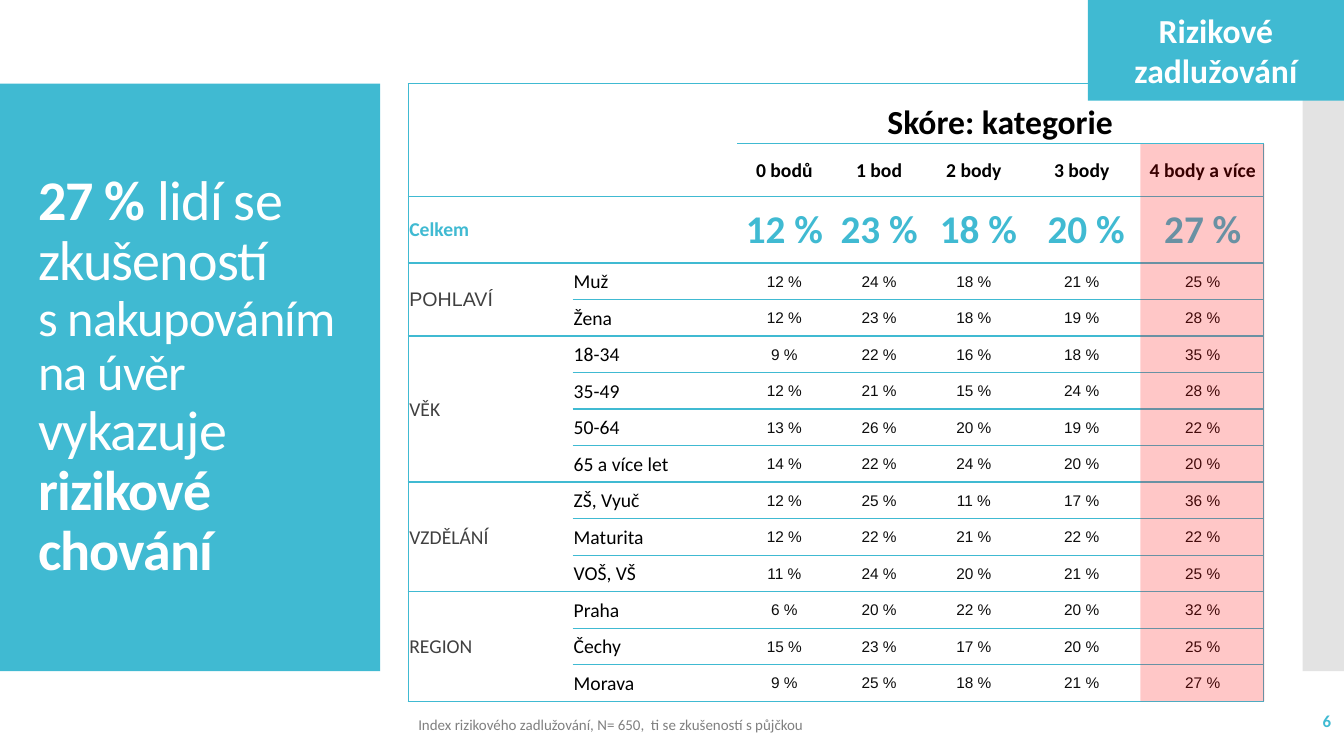
from lxml.etree import SubElement
from pptx import Presentation
from pptx.dml.color import RGBColor
from pptx.enum.shapes import MSO_SHAPE
from pptx.enum.text import MSO_ANCHOR, PP_ALIGN
from pptx.oxml.ns import qn
from pptx.util import Inches, Pt

TEAL, WHITE, BLACK = "40BAD2", "FFFFFF", "000000"
NO_STYLE = "{2D5ABB26-0587-4C30-8999-92F81FD0307C}"


def style_run(run, size, color, bold=False, font="Calibri"):
    run.font.size = Pt(size)
    run.font.color.rgb = RGBColor.from_string(color)
    run.font.bold = bold
    run.font.name = font


def add_box(left, top, width, height, fill=None, opacity=100):
    place = [Inches(value) for value in (left, top, width, height)]
    if fill is None:
        shape = slide.shapes.add_textbox(*place)
    else:
        shape = slide.shapes.add_shape(MSO_SHAPE.RECTANGLE, *place)
        shape.shadow.inherit = False
        shape.line.fill.background()
        shape.fill.solid()
        shape.fill.fore_color.rgb = RGBColor.from_string(fill)
        if opacity < 100:
            color = next(shape.fill._xPr.iter(qn("a:srgbClr")))
            SubElement(color, qn("a:alpha"), val=str(opacity * 1000))
    shape.text_frame.word_wrap = True
    return shape


presentation = Presentation()
presentation.slide_width = Inches(13.33)
presentation.slide_height = Inches(7.5)
slide = presentation.slides.add_slide(presentation.slide_layouts[6])

# Side panels
add_box(0, 0.83, 3.77, 5.83, TEAL)
add_box(12.92, 0.83, 0.41, 5.83, "C8C8C8", 50)

# Headline
headline = add_box(0.28, 1.23, 3.43, 5.03)
headline.text_frame.vertical_anchor = MSO_ANCHOR.MIDDLE
paragraph = headline.text_frame.paragraphs[0]
paragraph.line_spacing = 0.9
for text, size, bold in [
    ("27 % ", 40, True),
    ("lidí se zkušeností ", 40, False),
    ("s nakupováním na úvěr ", 36, False),
    ("vykazuje ", 40, False),
    ("rizikové chování", 40, True),
]:
    if text.startswith("s nakup"):
        paragraph.add_line_break()
    run = paragraph.add_run()
    run.text = text
    style_run(run, size, WHITE, bold)
    run.font._element.set("spc", "-60")

# Table contents: group, category, shares
header = ["", "", "0 bodů", "1 bod", "2 body", "3 body", "4 body a více"]
total = ["Celkem", "", "12 %", "23 %", " 18 %", " 20 %", "27 %"]
groups = [
    ("POHLAVÍ", [("Muž", 12, 24, 18, 21, 25), ("Žena", 12, 23, 18, 19, 28)]),
    ("VĚK", [
        ("18-34", 9, 22, 16, 18, 35),
        ("35-49", 12, 21, 15, 24, 28),
        ("50-64", 13, 26, 20, 19, 22),
        ("65 a více let", 14, 22, 24, 20, 20),
    ]),
    ("VZDĚLÁNÍ", [
        ("ZŠ, Vyuč", 12, 25, 11, 17, 36),
        ("Maturita", 12, 22, 21, 22, 22),
        ("VOŠ, VŠ", 11, 24, 20, 21, 25),
    ]),
    ("REGION", [
        ("Praha", 6, 20, 22, 20, 32),
        ("Čechy", 15, 23, 17, 20, 25),
        ("Morava", 9, 25, 18, 21, 27),
    ]),
]
rows = [["", "", "Skóre: kategorie", "", "", "", ""], header, total]
merges = [(0, 0, 1, 1), (0, 2, 0, 6)]
for group, categories in groups:
    merges.append((len(rows), 0, len(rows) + len(categories) - 1, 0))
    for index, (category, *shares) in enumerate(categories):
        label = group if index == 0 else ""
        rows.append([label, category] + [f"{share} %" for share in shares])

# Table grid
widths = [1.63, 1.63, 0.94, 0.94, 0.94, 1.2, 1.2]
heights = [0.59, 0.53, 0.66] + [4.35 / 12] * 12
frame = slide.shapes.add_table(
    len(rows), len(widths), Inches(4.05), Inches(0.83), Inches(8.48), Inches(6.13))
table = frame.table
table.first_row = table.horz_banding = False
table._tbl.tblPr.find(qn("a:tableStyleId")).text = NO_STYLE
for column, width in zip(table.columns, widths):
    column.width = Inches(width)
for row, height in zip(table.rows, heights):
    row.height = Inches(height)
for top, left, bottom, right in merges:
    table.cell(top, left).merge(table.cell(bottom, right))

# Table cells
for row_index, row in enumerate(rows):
    for column_index, text in enumerate(row):
        cell = table.cell(row_index, column_index)
        cell.margin_left = cell.margin_right = cell.margin_top = Inches(0.01)
        cell.margin_bottom = 0
        cell.vertical_anchor = MSO_ANCHOR.BOTTOM if row_index == 0 else MSO_ANCHOR.MIDDLE

        # Outer frame and row lines, with none inside a merged group
        origin = not cell.is_spanned
        last_row = row_index == len(rows) - 1
        sides = {
            "lnL": column_index == 0,
            "lnR": column_index == len(widths) - 1,
            "lnT": origin or row_index == 0,
            "lnB": origin or last_row or row_index < 2 and (row_index, column_index) != (0, 1),
        }
        for side, visible in sides.items():
            if visible:
                line = SubElement(cell._tc.get_or_add_tcPr(), qn(f"a:{side}"), w="12700")
                fill = SubElement(line, qn("a:solidFill"))
                SubElement(fill, qn("a:srgbClr"), val=TEAL)
        cell.fill.solid()
        cell.fill.fore_color.rgb = RGBColor.from_string(WHITE)
        if not text:
            continue

        cell.text_frame.text = text
        paragraph = cell.text_frame.paragraphs[0]
        if column_index > 1:
            paragraph.alignment = PP_ALIGN.CENTER
        if row_index == 0:
            look = (24, BLACK, True)
        elif row_index == 1:
            look = (14, BLACK, True)
        elif row_index == 2:
            look = (28 if column_index > 1 else 14, TEAL, True)
        elif column_index == 0:
            look = (14, "404040", False, "Arial" if text == "POHLAVÍ" else "Calibri")
        elif column_index == 1:
            look = (14, BLACK)
        else:
            look = (11, "0D0D0D", False, "Arial")
        style_run(paragraph.runs[0], *look)

# Page number, highlighted column, footnote and topic tag
page_number = add_box(11.63, 6.95, 1.67, 0.4)
add_box(11.31, 1.43, 1.23, 5.53, "FF0000", 22)
footnote = add_box(4.05, 7.05, 4.35, 0.28)
topic = add_box(10.79, 0, 2.54, 1, TEAL)
note = "Index rizikového zadlužování, N= 650,  ti se zkušeností s půjčkou"
for shape, text, anchor, alignment, look in [
    (page_number, "6", MSO_ANCHOR.MIDDLE, PP_ALIGN.RIGHT, (12, TEAL, True)),
    (footnote, note, MSO_ANCHOR.TOP, PP_ALIGN.LEFT, (10.7, "808080")),
    (topic, "Rizikové zadlužování", MSO_ANCHOR.MIDDLE, PP_ALIGN.CENTER, (24, WHITE, True)),
]:
    shape.text_frame.text = text
    shape.text_frame.vertical_anchor = anchor
    paragraph = shape.text_frame.paragraphs[0]
    paragraph.alignment = alignment
    style_run(paragraph.runs[0], *look)

presentation.save("out.pptx")
